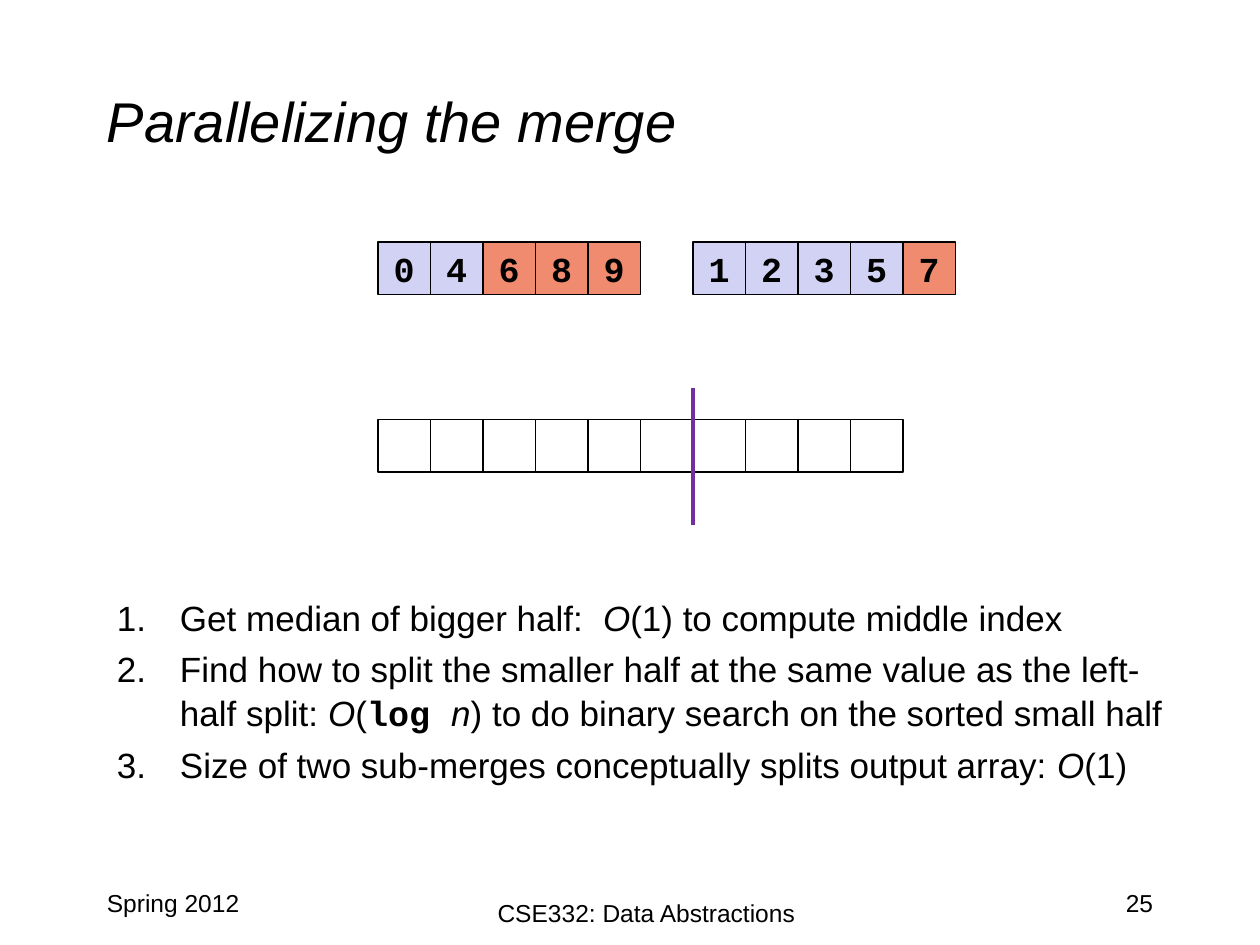
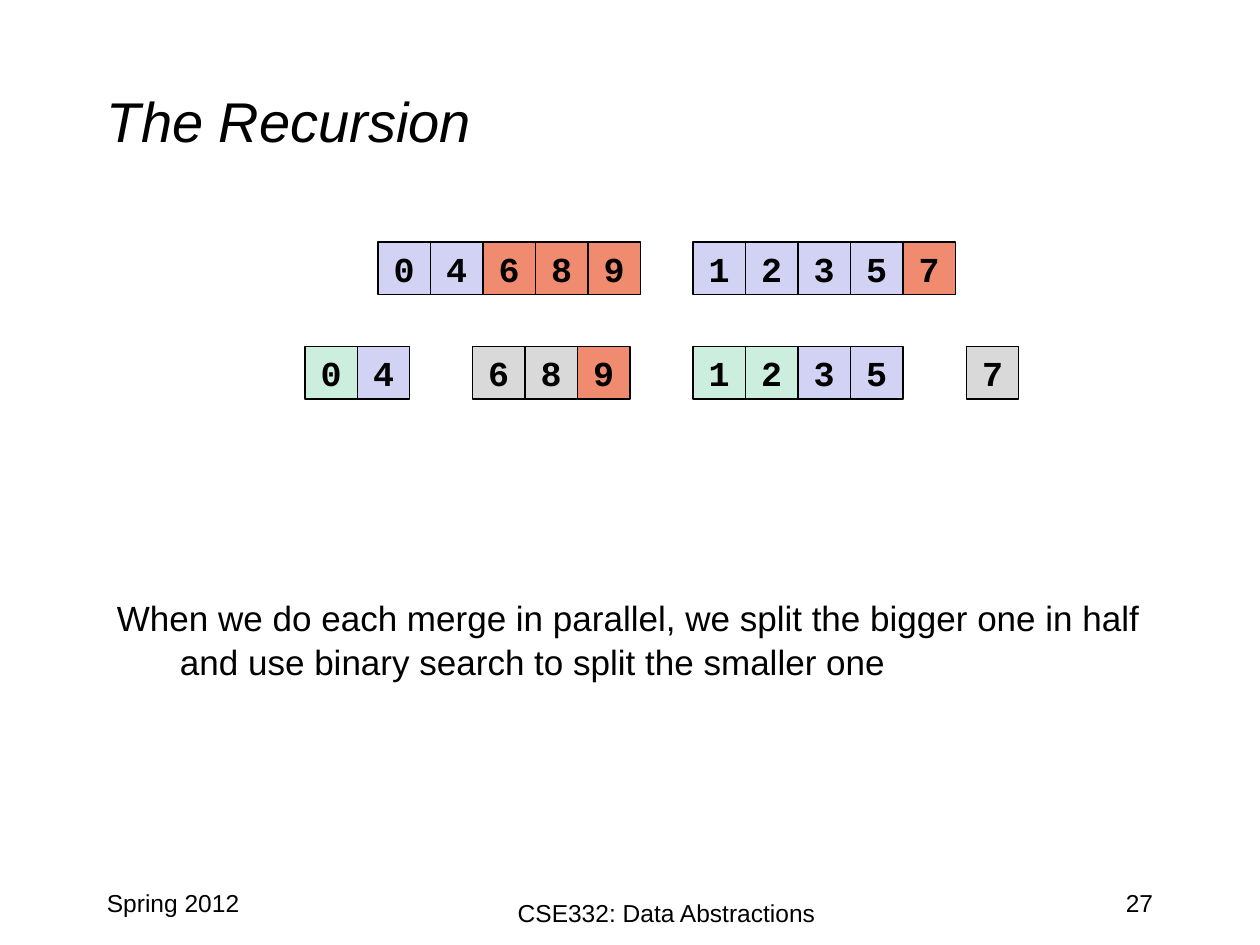
"""Build two slides on parallelizing the merge step of merge sort."""
import pptx
import pptx.util
import pptx.dml.color
import pptx.enum.shapes
import pptx.enum.text
import lxml.etree

Inches, Pt = pptx.util.Inches, pptx.util.Pt
RGBColor = pptx.dml.color.RGBColor
PP_ALIGN = pptx.enum.text.PP_ALIGN
MSO_ANCHOR = pptx.enum.text.MSO_ANCHOR

BLACK = RGBColor(0x00, 0x00, 0x00)
LOW = RGBColor(0xD2, 0xD2, 0xF4)
HIGH = RGBColor(0xF1, 0x8B, 0x6F)
LOWEST = RGBColor(0xCC, 0xEE, 0xDF)
MIDDLE = RGBColor(0xD9, 0xD9, 0xD9)
PURPLE = RGBColor(0x70, 0x30, 0xA0)
CELL = 5 / 12
NS = "{http://schemas.openxmlformats.org/drawingml/2006/main}"

halves = [
    (3, 1.92, "04689", [LOW] * 2 + [HIGH] * 3),
    (5.5, 1.92, "12357", [LOW] * 4 + [HIGH]),
]
output = [(3, 3.33, " " * 10, [None] * 10)]
quarters = [
    (2.42, 2.75, "04", [LOWEST, LOW]),
    (3.75, 2.75, "689", [MIDDLE, MIDDLE, HIGH]),
    (5.5, 2.75, "1235", [LOWEST] * 2 + [LOW] * 2),
    (7.67, 2.75, "7", [MIDDLE]),
]
steps = [
    [("Get median of bigger half:  ", ""), ("O", "i"), ("(1) to compute middle index", "")],
    [("Find how to split the smaller half at the same value as the left-half split: ", ""),
     ("O", "i"), ("(", ""), ("log ", "code"), ("n", "i"),
     (") to do binary search on the sorted small half", "")],
    [("Size of two sub-merges conceptually splits output array: ", ""), ("O", "i"), ("(1)", "")],
]
recursion = [[("When we do each merge in parallel, we split the bigger one in half "
               "and use binary search to split the smaller one", "")]]
slides = [
    ("Parallelizing the merge", "25", 2.92, halves + output, steps, 8.58, True),
    ("The Recursion", "27", 3.08, halves + quarters, recursion, 8.67, False),
]


def style(p, size, name="Arial", align=PP_ALIGN.LEFT):
    p.alignment = align
    p.font.size = Pt(size)
    p.font.name = name
    p.font.color.rgb = BLACK


def add_text(s, x, y, w, h, text, size, align=PP_ALIGN.LEFT):
    tf = s.shapes.add_textbox(Inches(x), Inches(y), Inches(w), Inches(h)).text_frame
    tf.word_wrap = True
    p = tf.paragraphs[0]
    p.text = text
    style(p, size, align=align)
    return tf


prs = pptx.Presentation()
prs.slide_width, prs.slide_height = Inches(10), Inches(7.5)

for title, number, footer_x, arrays, body, body_w, is_split in slides:
    s = prs.slides.add_slide(prs.slide_layouts[6])
    tf = add_text(s, 0.75, 0.33, 8.5, 1.25, title, 32)
    tf.vertical_anchor = MSO_ANCHOR.MIDDLE
    tf.paragraphs[0].font.italic = True
    add_text(s, 0.75, 7, 2.08, 0.5, "Spring 2012", 14)
    add_text(s, footer_x, 7.08, 4.42, 0.5, "CSE332: Data Abstractions", 14, PP_ALIGN.CENTER)
    add_text(s, 7.17, 7, 2.08, 0.5, number, 14, PP_ALIGN.RIGHT)

    for x, y, digits, fills in arrays:
        for i, (digit, fill) in enumerate(zip(digits, fills)):
            sp = s.shapes.add_shape(pptx.enum.shapes.MSO_SHAPE.RECTANGLE, Inches(x + i * CELL),
                                    Inches(y), Inches(CELL), Inches(CELL))
            sp.shadow.inherit = False
            sp.line.color.rgb = BLACK
            sp.line.width = Pt(0.75)
            if fill is None:
                sp.fill.background()
                continue
            sp.fill.solid()
            sp.fill.fore_color.rgb = fill
            tf = sp.text_frame
            tf.word_wrap = False
            tf.vertical_anchor = MSO_ANCHOR.MIDDLE
            p = tf.paragraphs[0]
            p.text = digit
            style(p, 20, "Courier New", PP_ALIGN.CENTER)
            p.font.bold = True

    if is_split:
        line = s.shapes.add_connector(pptx.enum.shapes.MSO_CONNECTOR.STRAIGHT,
                                      Inches(5.5), Inches(3.08), Inches(5.5), Inches(4.17))
        line.line.color.rgb = PURPLE
        line.line.width = Pt(2.25)
        lxml.etree.SubElement(line._element.spPr, NS + "effectLst")

    tf = s.shapes.add_textbox(Inches(0.83), Inches(4.67), Inches(body_w), Inches(1.92)).text_frame
    tf.word_wrap = True
    for i, runs in enumerate(body):
        p = tf.add_paragraph() if i else tf.paragraphs[0]
        style(p, 20)
        p.space_before = Pt(4)
        p.line_spacing = 1.05
        pPr = p._p.get_or_add_pPr()
        pPr.set("marL", str(Inches(0.5)))
        pPr.set("indent", str(Inches(-0.5)))
        if is_split:
            bullet = lxml.etree.Element(NS + "buAutoNum", type="arabicPeriod")
            pPr.find(NS + "defRPr").addprevious(bullet)
        for text, kind in runs:
            r = p.add_run()
            r.text = text
            if kind == "i":
                r.font.italic = True
            elif kind == "code":
                r.font.name = "Courier New"
                r.font.bold = True

prs.save("out.pptx")
